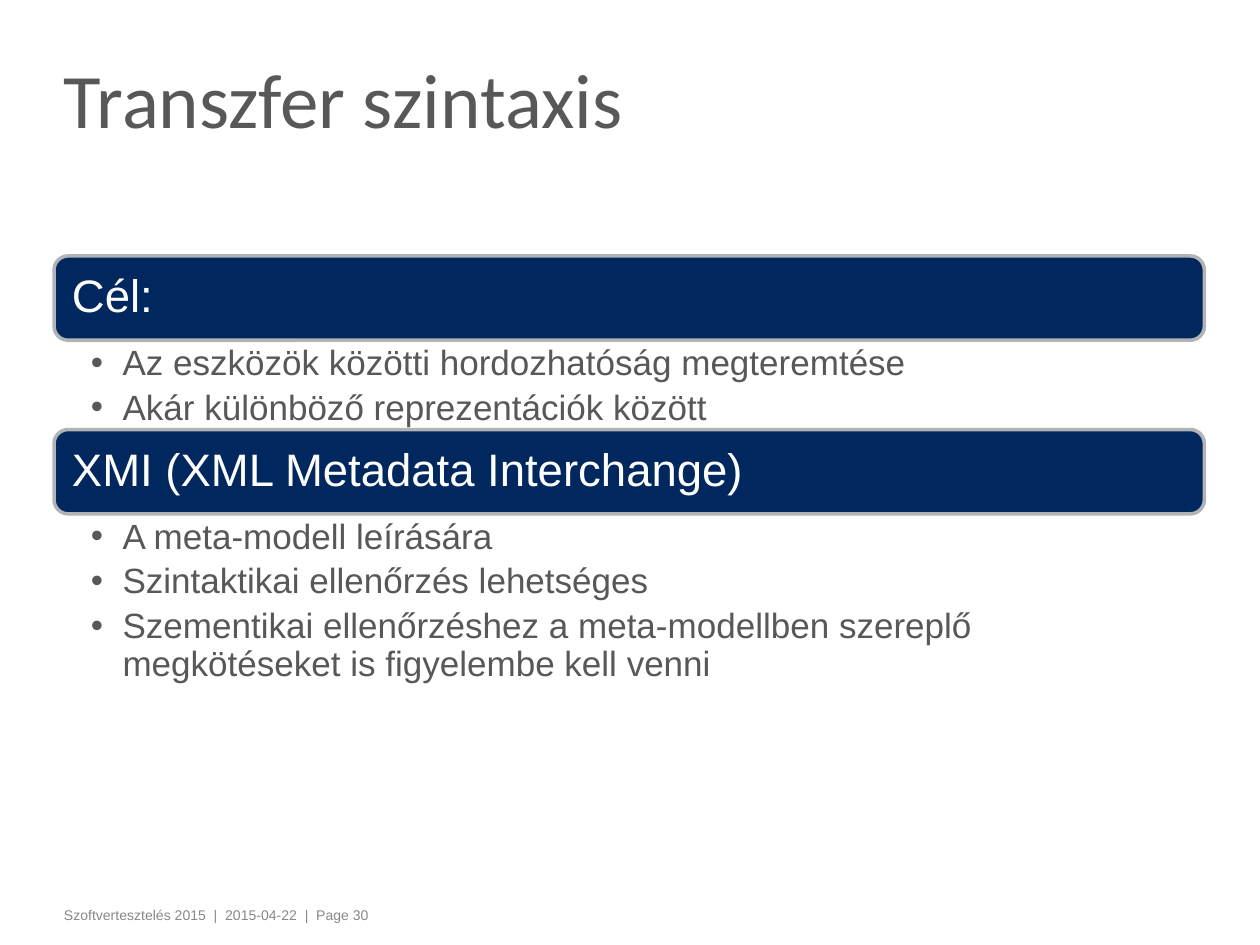
from lxml import etree
from pptx import Presentation
from pptx.dml.color import RGBColor
from pptx.enum.shapes import MSO_SHAPE
from pptx.enum.text import MSO_ANCHOR, MSO_AUTO_SIZE, PP_ALIGN
from pptx.oxml.ns import qn
from pptx.util import Cm, Pt

ROUNDED = MSO_SHAPE.ROUNDED_RECTANGLE
TOP, MIDDLE = MSO_ANCHOR.TOP, MSO_ANCHOR.MIDDLE
NO_FIT = MSO_AUTO_SIZE.NONE
LEFT = PP_ALIGN.LEFT

COLORS = {
    "navy": "00285E",
    "border": "B1B3B4",
    "text": "58585A",
    "footer": "87888A",
    "white": "FFFFFF",
}

SECTIONS = [
    ("Cél:", 1.8, [
        "Az eszközök közötti hordozhatóság megteremtése",
        "Akár különböző reprezentációk között",
    ]),
    ("XMI (XML Metadata Interchange)", 3.43, [
        "A meta-modell leírására",
        "Szintaktikai ellenőrzés lehetséges",
        "Szementikai ellenőrzéshez a meta-modellben szereplő "
        "megkötéseket is figyelembe kell venni",
    ]),
]

MARGIN, WIDTH = 1.09, 23.19
FIRST_TOP, BAR_HEIGHT = 5.16, 1.7


class SlideBuilder:
    def __init__(self, page):
        self.page = page

    def color(self, name):
        return RGBColor.from_string(COLORS[name])

    def place(self, shape, left, top, width, height):
        shape.left, shape.top = Cm(left), Cm(top)
        shape.width, shape.height = Cm(width), Cm(height)

    def frame(self, shape, insets, anchor):
        frame = shape.text_frame
        frame.word_wrap = True
        frame.auto_size = NO_FIT
        frame.vertical_anchor = anchor
        (frame.margin_left, frame.margin_top,
         frame.margin_right, frame.margin_bottom) = map(Cm, insets)
        return frame

    def style(self, para, size, color, font="Arial", spacing=1.0, after=0):
        para.alignment = LEFT
        para.line_spacing = spacing
        para.space_before = Pt(0)
        para.space_after = Pt(after)
        para.font.name = font
        para.font.size = Pt(size)
        para.font.color.rgb = self.color(color)

    def title(self, text):
        box = self.page.shapes.title
        self.place(box, MARGIN, 0.66, 20.83, 3.02)
        frame = self.frame(box, (0.2, 0, 0.2, 0), MIDDLE)
        frame.text = text
        self.style(frame.paragraphs[0], 44, "text", "Calibri", 0.75)

    def bar(self, text, top):
        box = self.page.shapes.add_shape(
            ROUNDED, Cm(MARGIN), Cm(top), Cm(WIDTH), Cm(BAR_HEIGHT))
        box.shadow.inherit = False
        box.fill.solid()
        box.fill.fore_color.rgb = self.color("navy")
        box.line.color.rgb = self.color("border")
        box.line.width = Pt(2)
        frame = self.frame(box, (0.28, 0.28, 0.28, 0.28), MIDDLE)
        frame.text = text
        self.style(frame.paragraphs[0], 26, "white", spacing=0.9)

    def bullets(self, box, items, top, height):
        self.place(box, MARGIN, top, WIDTH, height)
        frame = self.frame(box, (0.74, 0.1, 0.51, 0.1), TOP)
        frame.text = "\n".join(items)
        for para in frame.paragraphs:
            properties = para._p.get_or_add_pPr()
            properties.set("marL", str(Cm(0.64)))
            properties.set("indent", str(Cm(-0.64)))
            etree.SubElement(properties, qn("a:buChar"), char="•")
            self.style(para, 20, "text", spacing=0.9, after=4)

    def footer(self, text):
        box = self.page.shapes.add_textbox(
            Cm(MARGIN), Cm(18.14), Cm(20.55), Cm(0.61))
        frame = self.frame(box, (0.2, 0.13, 0.2, 0.13), TOP)
        frame.text = text
        self.style(frame.paragraphs[0], 8, "footer")


def main():
    deck = Presentation()
    deck.slide_width, deck.slide_height = Cm(25.4), Cm(19.05)
    page = deck.slides.add_slide(deck.slide_layouts.get_by_name("Two Content"))
    builder = SlideBuilder(page)
    builder.title("Transzfer szintaxis")

    top = FIRST_TOP
    bodies = list(page.placeholders)[1:]
    for body, (heading, height, items) in zip(bodies, SECTIONS):
        builder.bar(heading, top)
        builder.bullets(body, items, top + BAR_HEIGHT, height)
        top += BAR_HEIGHT + height

    builder.footer("Szoftvertesztelés 2015  |  2015-04-22  |  Page 30")
    deck.save("out.pptx")


if __name__ == "__main__":
    main()
